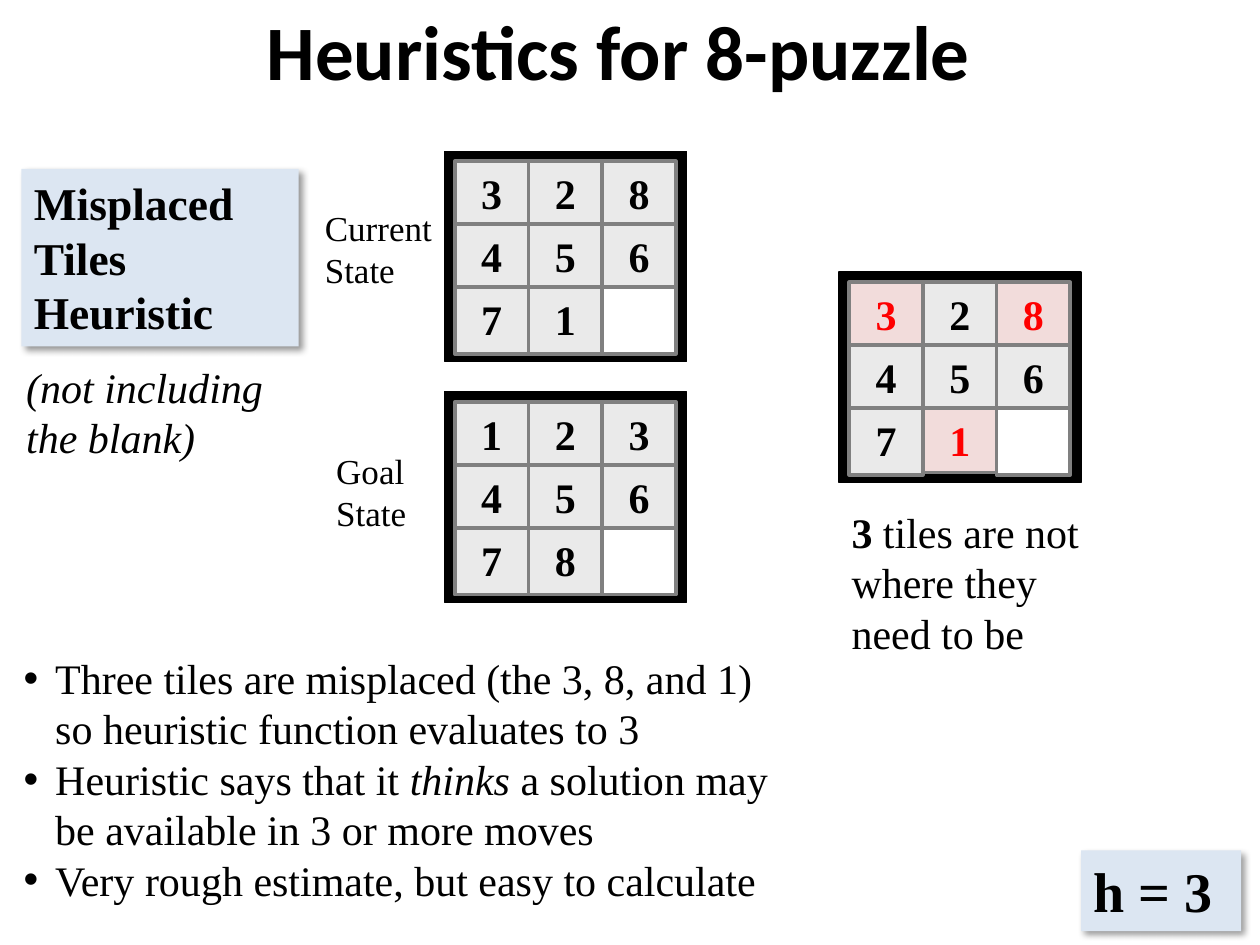
from lxml import etree
from pptx import Presentation, util as u
from pptx.dml.color import RGBColor
from pptx.enum import shapes, text
from pptx.oxml import parse_xml
from pptx.oxml.ns import nsdecls, qn

COLOURS = {
    "ink": "000000", "paper": "FFFFFF", "panel": "DCE6F2", "tile": "EAEAEA",
    "edge": "808080", "wrong": "FF0000", "wrong_tile": "F2DCDB",
}
SERIF = "Times New Roman"
CELL = u.Inches(0.1)  # the slide is a grid of 100 columns by 75 rows
BOARD_SIZE = (19.2, 16.7)
BOARD_MARGIN = 0.8
TILE_STEP = (5.85, 5)
TILE_SIZE = (5.85, 5.3)
WRONG_TILE_SIZE = (5.85, 5.1)
CURRENT = ["328", "456", "71 "]
GOAL = ["123", "456", "78 "]


def colour(name):
    return RGBColor.from_string(COLOURS[name])


def grid(*cells):
    return [int(CELL * cell) for cell in cells]


def style(para, size, name="ink", face=SERIF, bold=None, italic=None):
    font = para.font
    font.name, font.size, font.bold, font.italic = face, u.Pt(size), bold, italic
    font.color.rgb = colour(name)


def rectangle(parent, box, fill, line=None, width=0.75):
    shape = parent.shapes.add_shape(shapes.MSO_SHAPE.RECTANGLE, *grid(*box))
    shape.shadow.inherit = False
    shape.fill.solid()
    shape.fill.fore_color.rgb = colour(fill)
    if line:
        shape.line.color.rgb = colour(line)
        shape.line.width = u.Pt(width)
    else:
        shape.line.fill.background()
    return shape


def cast_shadow(shape):
    properties = shape._element.spPr
    properties.remove(properties.find(qn("a:effectLst")))
    properties.append(parse_xml(
        f'<a:effectLst {nsdecls("a")}><a:outerShdw blurRad="{u.Pt(4)}" dist="{u.Pt(3)}"'
        f' dir="2700000" algn="tl" rotWithShape="0"><a:srgbClr val="{COLOURS["ink"]}">'
        '<a:alpha val="40000"/></a:srgbClr></a:outerShdw></a:effectLst>'))


def write(shape, paragraphs, size, wrap=True, **look):
    """Fill a shape with paragraphs, each a list of (words, font changes)."""
    frame = shape.text_frame
    frame.word_wrap = wrap
    frame.vertical_anchor = text.MSO_ANCHOR.TOP
    for number, spans in enumerate(paragraphs):
        para = frame.paragraphs[0] if number == 0 else frame.add_paragraph()
        para.alignment = text.PP_ALIGN.LEFT
        style(para, size, **look)
        for words, changes in spans:
            span = para.add_run()
            span.text = words
            for attribute, value in changes.items():
                setattr(span.font, attribute, value)
    return frame


def note(page, box, paragraphs, size, **look):
    return write(page.shapes.add_textbox(*grid(*box)), paragraphs, size, **look)


def panel(page, box, lines, size, wrap=True):
    shape = rectangle(page, box, "panel")
    cast_shadow(shape)
    write(shape, [[(line, {})] for line in lines], size, wrap, bold=True)


def title(page, box, words):
    frame = note(page, box, [[(words, {})]], 44, face="Calibri", bold=True)
    frame.vertical_anchor = text.MSO_ANCHOR.MIDDLE
    frame.paragraphs[0].alignment = text.PP_ALIGN.CENTER


def bullets(page, box, paragraphs):
    frame = note(page, box, paragraphs, 24)
    for para in frame.paragraphs:
        properties = para._p.get_or_add_pPr()
        properties.set("marL", str(u.Inches(0.25)))
        properties.set("indent", str(-u.Inches(0.25)))
        font = etree.Element(qn("a:buFont"), typeface="Arial")
        mark = etree.Element(qn("a:buChar"), char="•")
        properties.find(qn("a:defRPr")).addprevious(font)
        font.addnext(mark)


def board(page, left, top, rows, goal=None):
    """Draw a puzzle; given a goal, mark the tiles that differ from it."""
    group = page.shapes.add_group_shape()
    rectangle(group, (left, top, *BOARD_SIZE), "ink", "ink")
    for row, digits in enumerate(rows):
        for column, digit in enumerate(digits):
            blank = digit == " "
            wrong = bool(goal) and not blank and digit != goal[row][column]
            x = left + BOARD_MARGIN + column * TILE_STEP[0]
            y = top + BOARD_MARGIN + row * TILE_STEP[1]
            size = WRONG_TILE_SIZE if wrong else TILE_SIZE
            fill = "paper" if blank else "wrong_tile" if wrong else "tile"
            tile = rectangle(group, (x, y, *size), fill, "edge", 2)
            if not blank:
                frame = write(tile, [[(digit, {})]], 24, bold=True,
                              name="wrong" if wrong else "ink")
                frame.paragraphs[0].alignment = text.PP_ALIGN.CENTER


def main():
    deck = Presentation()
    deck.slide_width, deck.slide_height = grid(100, 75)
    page = deck.slides.add_slide(deck.slide_layouts[6])

    title(page, (7.3, -2.3, 85, 12.5), "Heuristics for 8-puzzle ")
    panel(page, (1.7, 13.4, 22, 14.1), ["Misplaced Tiles", "Heuristic"], 26)
    bullets(page, (0.9, 51.3, 63.3, 21.2), [
        [("Three tiles are misplaced (the 3, 8, and 1) "
          "so heuristic function evaluates to 3", {})],
        [("Heuristic says that it ", {}), ("thinks", {"italic": True}),
         (" a solution may be available in 3 or more moves", {})],
        [("Very rough estimate, but easy to calculate", {})],
    ])
    board(page, 35.3, 12, CURRENT)
    board(page, 35.3, 31.1, GOAL)
    note(page, (25.7, 35.2, 11.6, 7.7), [[("Goal State", {})]], 20)
    note(page, (24.8, 15.9, 13, 7.7), [[("Current State", {})]], 20)
    panel(page, (85.8, 67.5, 12.7, 6.4), ["h = 3"], 32, wrap=False)
    note(page, (1.1, 28.2, 23.4, 9.1),
         [[("(not including the blank)", {})]], 24, italic=True)
    board(page, 66.6, 21.6, CURRENT, GOAL)
    note(page, (66.6, 39.7, 20.1, 13.1),
         [[("3", {"bold": True}), (" tiles are not where they need to be", {})]], 24)
    deck.save("out.pptx")


if __name__ == "__main__":
    main()
